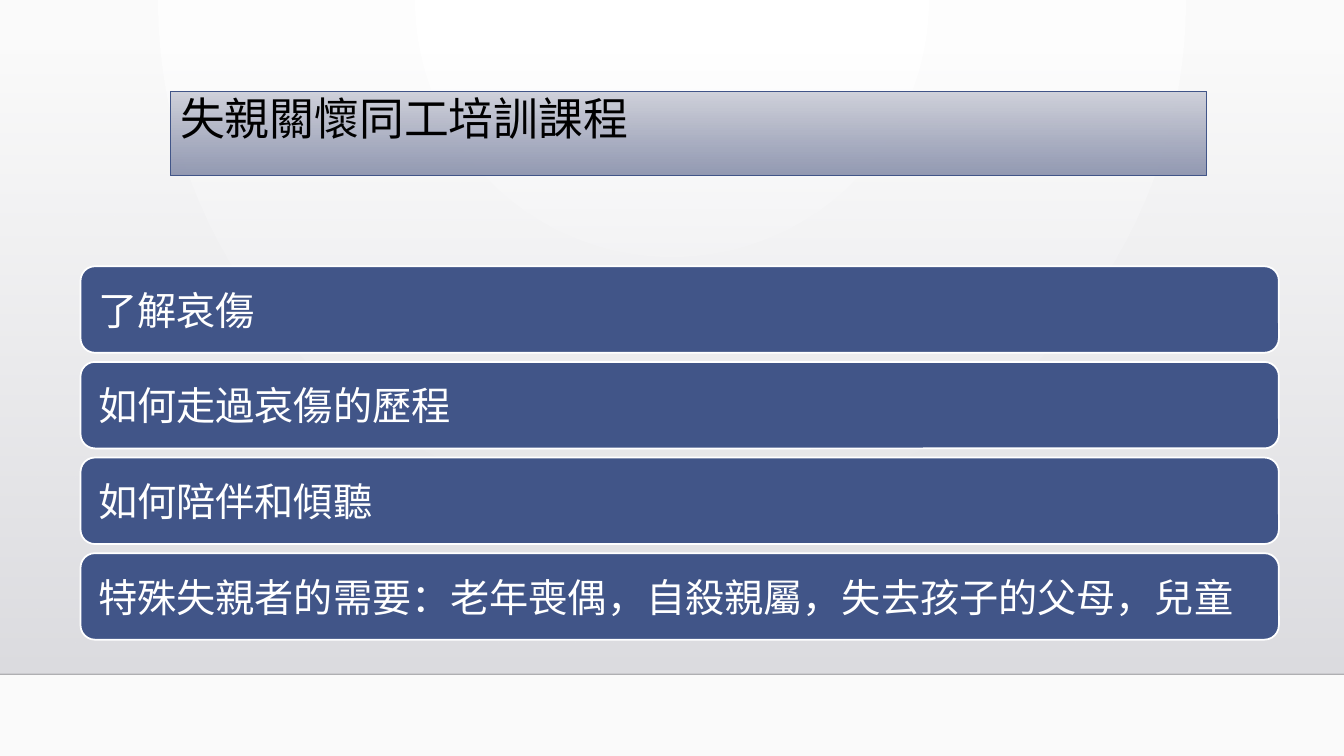
"""Build the course outline slide: a title bar above four topic rows."""
from dataclasses import dataclass
from typing import Any

from lxml.etree import SubElement
from pptx import Presentation
from pptx.dml.color import RGBColor
from pptx.enum.shapes import MSO_CONNECTOR, MSO_SHAPE
from pptx.enum.text import MSO_ANCHOR, MSO_AUTO_SIZE, PP_ALIGN
from pptx.oxml.ns import qn
from pptx.util import Cm, Pt

WHITE = RGBColor(0xFF, 0xFF, 0xFF)
BLACK = RGBColor(0x00, 0x00, 0x00)
INK = RGBColor(0x00, 0x00, 0x01)
BLUE = RGBColor(0x41, 0x55, 0x88)
PAPER = RGBColor(0xFA, 0xFA, 0xFA)
MIST = RGBColor(0xDC, 0xDC, 0xE0)
FOG = RGBColor(0xDE, 0xDE, 0xE2)
PALE = RGBColor(0xD0, 0xD2, 0xDB)
SLATE = RGBColor(0x8B, 0x92, 0xAD)

FACE = "TeX Gyre Adventor"
WIDE, HIGH = Cm(33.87), Cm(19.05)
FLOOR = Cm(16.99)
TOP, PITCH = 6.71, 2.41
TOPICS = (
    "了解哀傷",
    "如何走過哀傷的歷程",
    "如何陪伴和傾聽",
    "特殊失親者的需要：老年喪偶，自殺親屬，失去孩子的父母，兒童",
)


@dataclass
class Stop:
    """One colour of a gradient, with its opacity in percent."""
    tint: RGBColor
    alpha: int = 100


@dataclass
class Label:
    """Text with its size, colour, anchor, side inset and line spacing."""
    text: str
    size: int
    tint: RGBColor
    anchor: MSO_ANCHOR
    inset: float
    space: float


def apply(item: Any, vals: dict[str, Any]) -> None:
    """Set each named attribute on the item."""
    for name, val in vals.items():
        setattr(item, name, val)


def fade(node: Any, alpha: int) -> None:
    """Give a colour element an opacity in percent."""
    SubElement(node, qn("a:alpha"), val=str(alpha * 1000))


def blend(fill: Any, root: Any, stops: list[Stop], round_: bool = False) -> None:
    """Fill with two colours, downwards or outwards from the top centre."""
    fill.gradient()
    grad = root.find(".//" + qn("a:gradFill"))
    for child in list(grad):
        grad.remove(child)
    group = SubElement(grad, qn("a:gsLst"))
    for pos, stop in zip(("0", "100000"), stops):
        node = SubElement(group, qn("a:gs"), pos=pos)
        tint = SubElement(node, qn("a:srgbClr"), val=str(stop.tint))
        if stop.alpha < 100:
            fade(tint, stop.alpha)
    if round_:
        ring = SubElement(grad, qn("a:path"), path="circle")
        SubElement(ring, qn("a:fillToRect"), l="43000", t="0", r="43000", b="100000")
    else:
        SubElement(grad, qn("a:lin"), ang="5400000", scaled="0")


def write(shape: Any, label: Label) -> None:
    """Put a left-aligned label into a shape."""
    frame = shape.text_frame
    frame.text = label.text
    side = Cm(label.inset)
    apply(frame, {
        "word_wrap": True, "auto_size": MSO_AUTO_SIZE.NONE,
        "vertical_anchor": label.anchor,
        "margin_left": side, "margin_right": side,
        "margin_top": Cm(0.13), "margin_bottom": Cm(0.13),
    })
    para = frame.paragraphs[0]
    apply(para, {"alignment": PP_ALIGN.LEFT, "line_spacing": label.space})
    apply(para.font, {"name": FACE, "size": Pt(label.size), "bold": False})
    para.font.color.rgb = label.tint


def edge(line: Any, tint: RGBColor, width: float) -> None:
    """Draw an outline in one colour."""
    line.width = Pt(width)
    line.color.rgb = tint


def stage(slide: Any) -> None:
    """Draw the backdrop and the floor line."""
    blend(slide.background.fill, slide.element, [Stop(WHITE), Stop(PAPER)], True)
    wall = slide.shapes.add_shape(MSO_SHAPE.RECTANGLE, 0, Cm(1.3), WIDE, FLOOR - Cm(1.3))
    wall.shadow.inherit = False
    wall.line.fill.background()
    blend(wall.fill, wall.element, [Stop(MIST, 0), Stop(FOG)])
    rule = slide.shapes.add_connector(MSO_CONNECTOR.STRAIGHT, 0, FLOOR, WIDE, FLOOR)
    edge(rule.line, INK, 1)
    props = rule.element.spPr
    fade(props.find(".//" + qn("a:srgbClr")), 20)
    SubElement(props, qn("a:effectLst"))


def head(slide: Any) -> None:
    """Format the title bar and lift it above the backdrop."""
    bar = slide.shapes.title
    bar.element.getparent().append(bar.element)
    apply(bar, {"left": Cm(4.29), "top": Cm(2.31), "width": Cm(26.11), "height": Cm(2.11)})
    blend(bar.fill, bar.element, [Stop(PALE), Stop(SLATE, 92)])
    edge(bar.line, BLUE, 0.75)
    write(bar, Label("失親關懷同工培訓課程", 32, BLACK, MSO_ANCHOR.TOP, 0.25, 0.9))


def row(slide: Any, rank: int, topic: str) -> None:
    """Draw one topic row."""
    card = slide.shapes.add_shape(
        MSO_SHAPE.ROUNDED_RECTANGLE, Cm(2.03), Cm(TOP + rank * PITCH), Cm(30.2), Cm(2.18))
    card.shadow.inherit = False
    card.fill.solid()
    card.fill.fore_color.rgb = BLUE
    edge(card.line, WHITE, 1.25)
    write(card, Label(topic, 28, WHITE, MSO_ANCHOR.MIDDLE, 0.34, 1.0))


def main() -> None:
    """Build and save the slide."""
    deck = Presentation()
    apply(deck, {"slide_width": WIDE, "slide_height": HIGH})
    slide = deck.slides.add_slide(deck.slide_layouts[5])
    stage(slide)
    head(slide)
    for rank, topic in enumerate(TOPICS):
        row(slide, rank, topic)
    deck.save("out.pptx")


if __name__ == "__main__":
    main()
